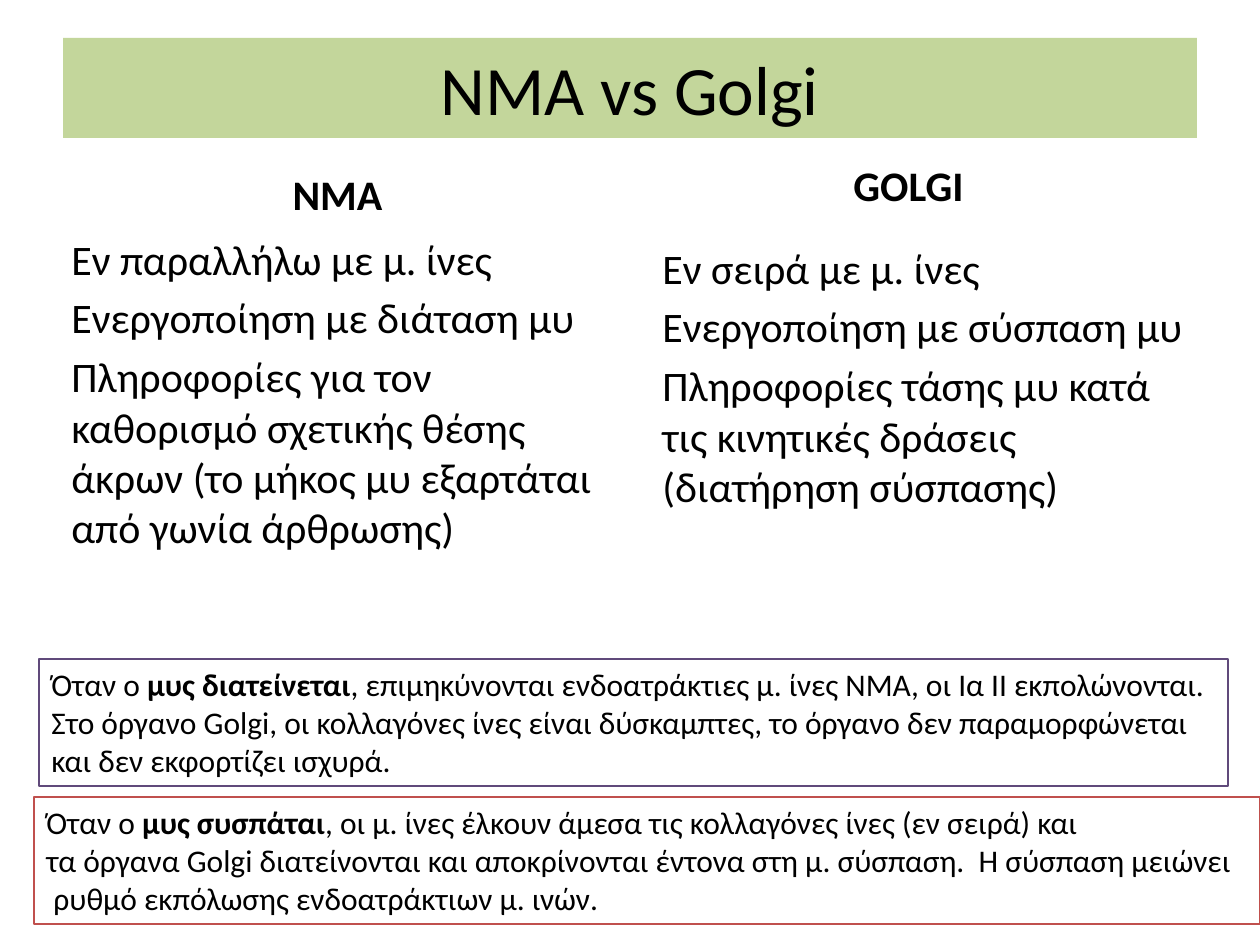
from dataclasses import dataclass

from pptx import Presentation
from pptx.dml.color import RGBColor
from pptx.enum.shapes import MSO_SHAPE
from pptx.enum.text import MSO_ANCHOR, MSO_AUTO_SIZE, PP_ALIGN
from pptx.util import Emu, Pt

RECT = MSO_SHAPE.RECTANGLE
TOP, MIDDLE, BOTTOM = MSO_ANCHOR.TOP, MSO_ANCHOR.MIDDLE, MSO_ANCHOR.BOTTOM
LEFT, CENTER = PP_ALIGN.LEFT, PP_ALIGN.CENTER
GROW = MSO_AUTO_SIZE.SHAPE_TO_FIT_TEXT
NO_FIT = MSO_AUTO_SIZE.NONE


@dataclass(frozen=True)
class Theme:
    font: str = "Calibri"
    ink: str = "000000"
    band: str = "C3D69B"
    stretch: str = "604A7B"
    contract: str = "C0504D"
    title: float = 39.6
    body: float = 24
    note: float = 18
    gap: float = 4.8
    edge: float = 0.75


THEME = Theme()

COLUMNS = [
    ("ΝΜΑ", (59, 137, 557, 88), (59, 227, 557, 418), [
        "Εν παραλλήλω με μ. ίνες",
        "Ενεργοποίηση με διάταση μυ",
        "Πληροφορίες για τον καθορισμό σχετικής θέσης άκρων "
        "(το μήκος μυ εξαρτάται από γωνία άρθρωσης)",
    ]),
    ("GOLGI", (630, 128, 557, 88), (650, 236, 557, 311), [
        "Εν σειρά με μ. ίνες",
        "Ενεργοποίηση με σύσπαση μυ",
        "Πληροφορίες τάσης μυ κατά τις κινητικές δράσεις "
        "(διατήρηση σύσπασης)",
    ]),
]

# Each line is a list of runs; every second run is bold.
NOTES = [
    ((39, 659, 1189, 127), THEME.stretch, False, [
        ["Όταν ο ", "μυς διατείνεται",
         ", επιμηκύνονται ενδοατράκτιες μ. ίνες ΝΜΑ, οι Ια ΙΙ εκπολώνονται."],
        ["Στο όργανο Golgi, οι κολλαγόνες ίνες είναι δύσκαμπτες, "
         "το όργανο δεν παραμορφώνεται"],
        ["και δεν εκφορτίζει ισχυρά."],
    ]),
    ((34, 797, 1226, 127), THEME.contract, True, [
        ["Όταν ο ", "μυς συσπάται",
         ", οι μ. ίνες έλκουν άμεσα τις κολλαγόνες ίνες (εν σειρά) και"],
        ["τα όργανα Golgi διατείνονται και αποκρίνονται έντονα "
         "στη μ. σύσπαση.  Η σύσπαση μειώνει"],
        [" ρυθμό εκπόλωσης ενδοατράκτιων μ. ινών."],
    ]),
]


def px(n):
    return Emu(n * 914400 // 126)


def place(shape, box):
    shape.left, shape.top, shape.width, shape.height = map(px, box)


def color(code):
    return RGBColor.from_string(code)


def add_run(para, text, size, bold=False):
    run = para.add_run()
    run.text = text
    font = run.font
    font.name, font.size, font.bold = THEME.font, Pt(size), bold
    font.color.rgb = color(THEME.ink)


def fill_text(frame, lines, size, align=LEFT, gap=0, bold=False):
    """Write lines of runs, where every second run of a line flips the weight."""
    for i, line in enumerate(lines):
        para = frame.add_paragraph() if i else frame.paragraphs[0]
        para.alignment = align
        para.space_before = Pt(gap)
        for j, text in enumerate(line):
            add_run(para, text, size, bold != (j % 2 == 1))


def set_title(slide, text, box):
    title = slide.shapes.title
    place(title, box)
    title.fill.solid()
    title.fill.fore_color.rgb = color(THEME.band)
    frame = title.text_frame
    frame.auto_size = NO_FIT
    frame.vertical_anchor = MIDDLE
    fill_text(frame, [[text]], THEME.title, CENTER)


def add_text(slide, box, lines, anchor=TOP, align=LEFT, bold=False):
    frame = slide.shapes.add_textbox(*map(px, box)).text_frame
    frame.word_wrap = True
    frame.auto_size = NO_FIT
    frame.vertical_anchor = anchor
    fill_text(frame, lines, THEME.body, align, THEME.gap, bold)


def add_column(slide, head, head_box, body_box, items):
    add_text(slide, head_box, [[head]], BOTTOM, CENTER, True)
    add_text(slide, body_box, [[item] for item in items])


def add_note(slide, box, edge, wrap, lines):
    shape = slide.shapes.add_shape(RECT, *map(px, box))
    shape.shadow.inherit = False
    shape.fill.background()
    shape.line.color.rgb = color(edge)
    shape.line.width = Pt(THEME.edge)
    frame = shape.text_frame
    frame.word_wrap = wrap
    frame.auto_size = GROW
    frame.vertical_anchor = TOP
    fill_text(frame, lines, THEME.note)


def main():
    deck = Presentation()
    deck.slide_width, deck.slide_height = px(1260), px(945)
    slide = deck.slides.add_slide(deck.slide_layouts[5])
    set_title(slide, "ΝΜΑ vs Golgi", (63, 38, 1134, 100))
    for column in COLUMNS:
        add_column(slide, *column)
    for note in NOTES:
        add_note(slide, *note)
    deck.save("out.pptx")


if __name__ == "__main__":
    main()
